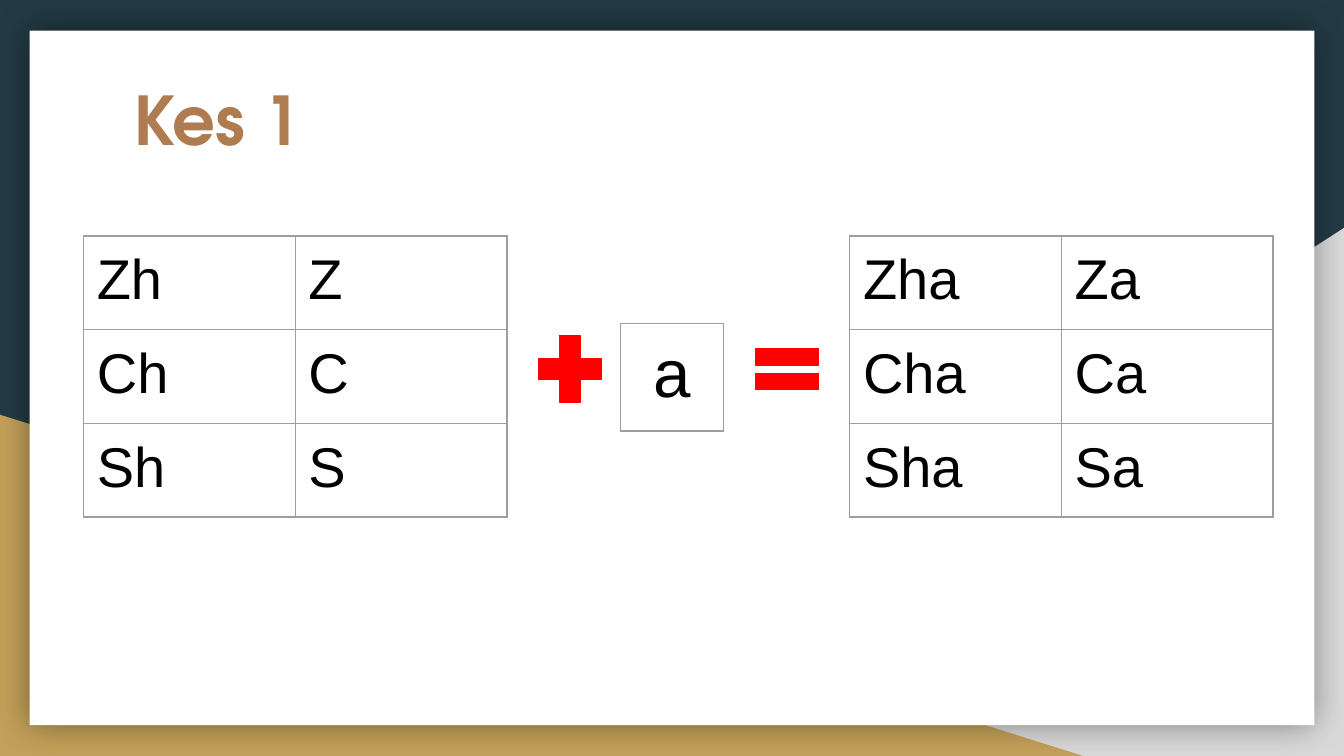
from lxml.etree import SubElement
from pptx import Presentation
from pptx.dml.color import RGBColor
from pptx.enum.shapes import MSO_SHAPE
from pptx.enum.text import MSO_ANCHOR, PP_ALIGN
from pptx.oxml.ns import qn
from pptx.util import Cm, Pt

WIDTH, HEIGHT = 25.4, 14.29
INSET = Cm(0.25)
TABLE_TOP, COLUMN_WIDTH, ROW_HEIGHT = 4.46, 4, 1.69
MARGINS = {f"margin_{side}": INSET for side in ("left", "top", "right", "bottom")}
CELL_FONT = {"name": "Arial", "size": Pt(30)}
VOWEL_FONT = {"name": "Arial", "size": Pt(36)}
TITLE_FONT = {"name": "TeX Gyre Adventor", "size": Pt(36), "bold": True}


def color(value):
    return RGBColor.from_string(value)


def apply(target, values):
    for name, value in values.items():
        setattr(target, name, value)


def write(paragraph, text, font, font_color):
    run = paragraph.add_run()
    run.text = text
    apply(run.font, font)
    run.font.color.rgb = color(font_color)


def add_shape(slide, kind, box, fill, line=None, adjustments=()):
    shape = slide.shapes.add_shape(kind, *map(Cm, box))
    shape.shadow.inherit = False
    shape.fill.solid()
    shape.fill.fore_color.rgb = color(fill)
    if line:
        shape.line.color.rgb = color(line)
        shape.line.width = Pt(0.75)
    else:
        shape.line.fill.background()
    for index, value in enumerate(adjustments):
        shape.adjustments[index] = value
    return shape


def add_glow(shape, shadow_color, alpha, blur):
    effects = shape._element.spPr.find(qn("a:effectLst"))
    shadow = SubElement(effects, qn("a:outerShdw"), blurRad=str(Pt(blur)),
                        dist="0", dir="0", algn="ctr", rotWithShape="0")
    tone = SubElement(shadow, qn("a:srgbClr"), val=shadow_color)
    SubElement(tone, qn("a:alpha"), val=str(alpha * 1000))


def add_borders(cell, line_color):
    properties = cell._tc.get_or_add_tcPr()
    for side in ("lnL", "lnR", "lnT", "lnB"):
        line = SubElement(properties, qn(f"a:{side}"), w=str(Pt(0.75)))
        fill = SubElement(line, qn("a:solidFill"))
        SubElement(fill, qn("a:srgbClr"), val=line_color)


def add_table(slide, left, top, column_width, row_height, rows, font, align=PP_ALIGN.LEFT):
    row_count, column_count = len(rows), len(rows[0])
    frame = slide.shapes.add_table(
        row_count, column_count, Cm(left), Cm(top),
        Cm(column_width * column_count), Cm(row_height * row_count))
    table = frame.table
    apply(table, {"first_row": False, "horz_banding": False})
    for row_index, row in enumerate(rows):
        for column_index, text in enumerate(row):
            cell = table.cell(row_index, column_index)
            apply(cell, MARGINS)
            add_borders(cell, "9E9E9E")
            cell.fill.background()
            paragraph = cell.text_frame.paragraphs[0]
            paragraph.alignment = align
            write(paragraph, text, font, "000000")


def add_title(slide, text):
    box = slide.shapes.add_textbox(Cm(2.29), Cm(1.24), Cm(20.85), Cm(2.64))
    apply(box.text_frame, {**MARGINS, "word_wrap": True, "vertical_anchor": MSO_ANCHOR.TOP})
    write(box.text_frame.paragraphs[0], text, TITLE_FONT, "AF7B51")


def add_backdrop(slide):
    slide.background.fill.solid()
    slide.background.fill.fore_color.rgb = color("233A44")
    gray = add_shape(slide, MSO_SHAPE.RIGHT_TRIANGLE, (9.96, 4.31, 15.44, 9.98), "D9D9D9")
    gray._element.spPr.get_or_add_xfrm().set("flipH", "1")
    add_shape(slide, MSO_SHAPE.RIGHT_TRIANGLE, (0, 7.84, 20.47, 6.45), "C4A15A")
    card = add_shape(slide, MSO_SHAPE.RECTANGLE, (0.56, 0.58, 24.28, 13.13), "FFFFFF")
    add_glow(card, "000000", 40, 18)


def main():
    presentation = Presentation()
    apply(presentation, {"slide_width": Cm(WIDTH), "slide_height": Cm(HEIGHT)})
    slide = presentation.slides.add_slide(presentation.slide_layouts[6])
    add_backdrop(slide)
    add_title(slide, "Kes 1")

    consonants = [("Zh", "Z"), ("Ch", "C"), ("Sh", "S")]
    vowel = "a"
    syllables = [[consonant + vowel for consonant in row] for row in consonants]
    for left, rows in ((1.58, consonants), (16.06, syllables)):
        add_table(slide, left, TABLE_TOP, COLUMN_WIDTH, ROW_HEIGHT, rows, CELL_FONT)
    add_table(slide, 11.73, 6.12, 1.95, 1.93, [[vowel]], VOWEL_FONT, PP_ALIGN.CENTER)

    signs = (
        (MSO_SHAPE.MATH_PLUS, (9.96, 6.12, 1.62, 1.72), (0.235,)),
        (MSO_SHAPE.MATH_EQUAL, (14.06, 6.32, 1.62, 1.32), (0.235, 0.118)),
    )
    for kind, box, adjustments in signs:
        add_shape(slide, kind, box, "FF0000", "FF0000", adjustments)
    presentation.save("out.pptx")


if __name__ == "__main__":
    main()
